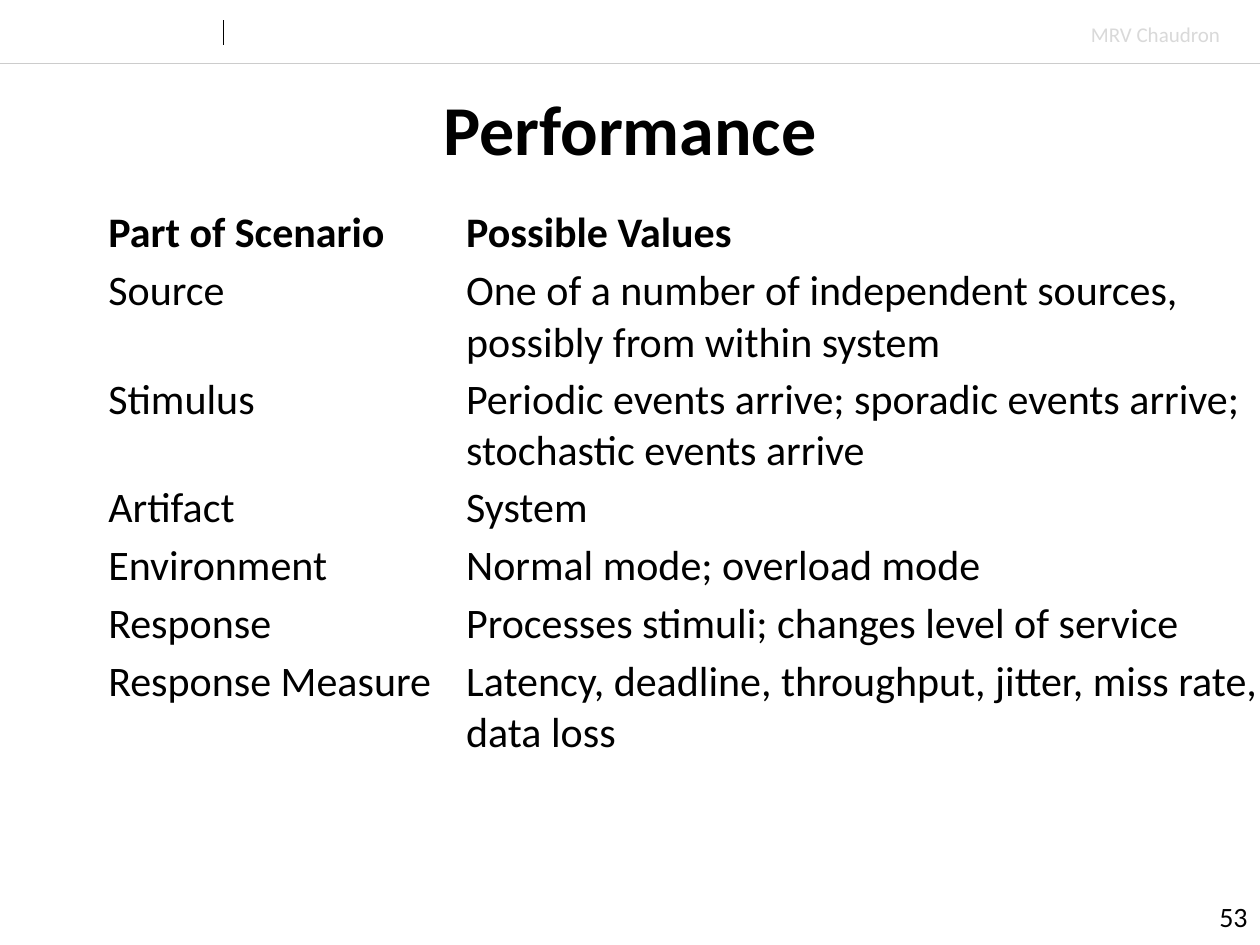
from dataclasses import dataclass

from lxml import etree
from pptx import Presentation
from pptx.dml.color import RGBColor
from pptx.enum.shapes import MSO_CONNECTOR
from pptx.enum.text import MSO_ANCHOR, PP_ALIGN
from pptx.oxml.ns import qn
from pptx.util import Inches, Pt

STRAIGHT = MSO_CONNECTOR.STRAIGHT
MIDDLE = MSO_ANCHOR.MIDDLE
LEFT, CENTER, RIGHT = PP_ALIGN.LEFT, PP_ALIGN.CENTER, PP_ALIGN.RIGHT


@dataclass(frozen=True)
class Theme:
    font: str = "Calibri"
    text: str = "000000"
    author: str = "D9D9D9"
    rule: str = "CCCCCC"
    title_size: int = 40
    table_size: int = 24
    number_size: int = 16
    author_size: int = 12


theme = Theme()


def write(tf, text, size, color=theme.text, bold=False, align=LEFT):
    tf.text = text
    p = tf.paragraphs[0]
    p.alignment = align
    p.font.name = theme.font
    p.font.size = Pt(size)
    p.font.bold = bold
    p.font.color.rgb = RGBColor.from_string(color)


prs = Presentation()
prs.slide_width, prs.slide_height = Inches(10), Inches(7.5)
s = prs.slides.add_slide(prs.slide_layouts[5])

# Header rule and tick
for x1, y1, x2, y2, color, width in [
    (0, 0.5, 10, 0.5, theme.rule, 0.25),
    (1.77, 0.16, 1.77, 0.36, theme.text, 0.5),
]:
    line = s.shapes.add_connector(
        STRAIGHT, Inches(x1), Inches(y1), Inches(x2), Inches(y2))
    line.line.color.rgb = RGBColor.from_string(color)
    line.line.width = Pt(width)
    etree.SubElement(line.element.spPr, qn("a:effectLst"))

author = s.shapes.add_textbox(Inches(8.56), Inches(0.12), Inches(1.23), Inches(0.3))
author.text_frame.word_wrap = False
write(author.text_frame, "MRV Chaudron", theme.author_size, theme.author)

title = s.shapes.title
title.left, title.top = Inches(0), Inches(0.6)
title.width, title.height = Inches(10), Inches(0.83)
title.text_frame.vertical_anchor = MIDDLE
write(title.text_frame, "Performance", theme.title_size, bold=True, align=CENTER)

# Scenario table: part, possible values, lines of text in the row
rows = [
    ("Part of Scenario", "Possible Values", 1),
    ("Source", "One of a number of independent sources, possibly from within system", 2),
    ("Stimulus", "Periodic events arrive; sporadic events arrive; stochastic events arrive", 2),
    ("Artifact", "System", 1),
    ("Environment", "Normal mode; overload mode", 1),
    ("Response", "Processes stimuli; changes level of service", 1),
    ("Response Measure", "Latency, deadline, throughput, jitter, miss rate, data loss", 2),
]
inset, line_height = 0.03, 0.4
heights = [2 * inset + line_height * lines for *_, lines in rows]
table = s.shapes.add_table(
    len(rows), 2, Inches(0.83), Inches(1.62), Inches(9.22), Inches(sum(heights))).table
table.first_row = table.horz_banding = False
table.columns[0].width, table.columns[1].width = Inches(2.84), Inches(6.38)
for i, (part, values, _) in enumerate(rows):
    table.rows[i].height = Inches(heights[i])
    for j, text in enumerate((part, values)):
        cell = table.cell(i, j)
        cell.fill.background()
        cell.margin_left = cell.margin_right = Inches(inset)
        cell.margin_top = cell.margin_bottom = Inches(inset)
        write(cell.text_frame, text, theme.table_size, bold=i == 0)

number = s.shapes.add_textbox(Inches(9.56), Inches(7.1), Inches(0.44), Inches(0.35))
number.text_frame.word_wrap = True
number.text_frame.vertical_anchor = MIDDLE
write(number.text_frame, "53", theme.number_size, align=RIGHT)

prs.save("out.pptx")
